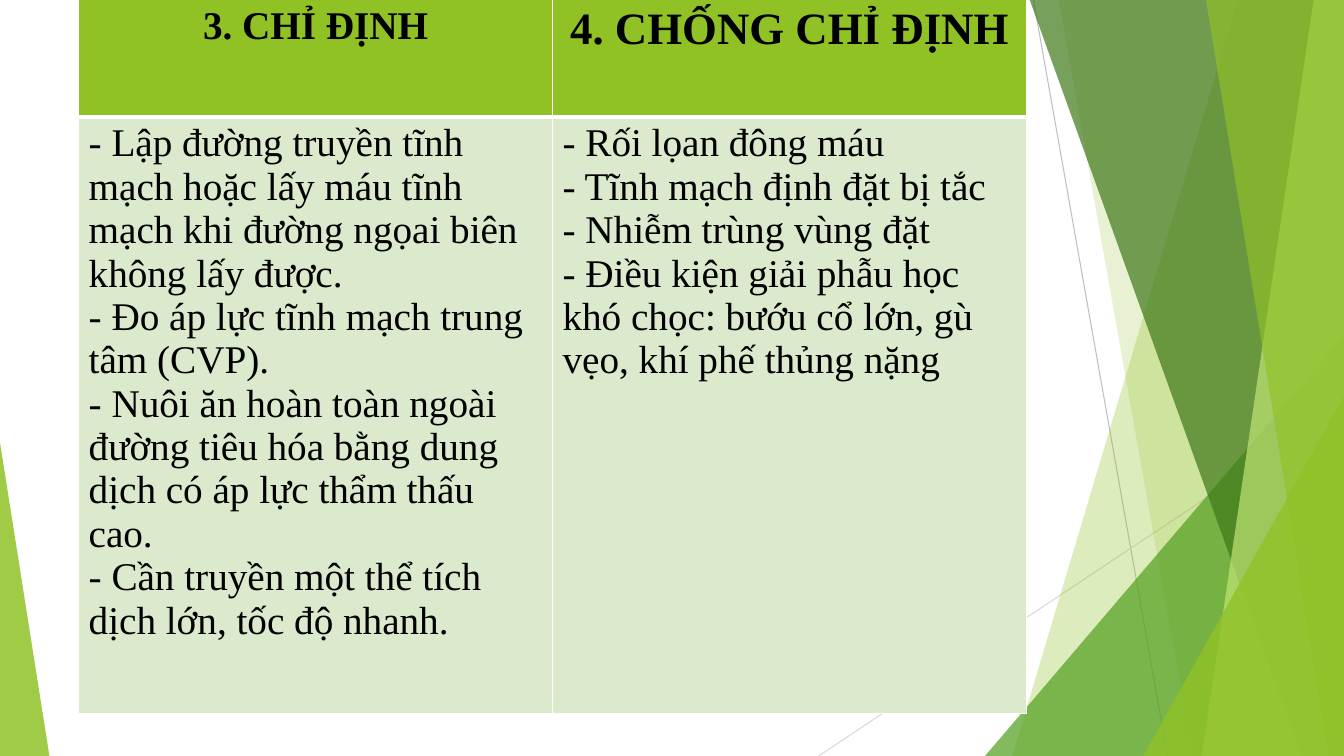
import pptx
import pptx.util
import pptx.dml.color
import pptx.enum.shapes
import pptx.enum.text
import pptx.oxml
import pptx.oxml.ns
from lxml import etree

Inches = pptx.util.Inches
Pt = pptx.util.Pt
qn = pptx.oxml.ns.qn

COLORS = {
    "lime": "90C226", "green": "54A021", "forest": "3F7819", "pale": "C0E474",
    "body": "DBE9CD", "white": "FFFFFF", "black": "000000",
    "gray": "BFBFBF", "silver": "D9D9D9",
}
WIDTH, HEIGHT, TOP = 13.33, 7.5, -0.01


def rgb(name):
    return pptx.dml.color.RGBColor.from_string(COLORS[name])


class Slide:
    font = "Times New Roman"

    def __init__(self, prs):
        self.s = prs.slides.add_slide(prs.slide_layouts[6])

    def paint(self, sp, color, alpha):
        sp.shadow.inherit = False
        sp.fill.solid()
        sp.fill.fore_color.rgb = rgb(color)
        sp.line.fill.background()
        clr = next(sp._element.spPr.iter(qn("a:srgbClr")))
        etree.SubElement(clr, qn("a:alpha"), val=str(alpha * 1000))

    def line(self, x1, y1, x2, y2, color):
        sp = self.s.shapes.add_connector(
            pptx.enum.shapes.MSO_CONNECTOR.STRAIGHT,
            Inches(x1), Inches(y1), Inches(x2), Inches(y2))
        sp.line.color.rgb = rgb(color)
        sp.line.width = Pt(0.75)
        etree.SubElement(sp._element.spPr, qn("a:effectLst"))

    def band(self, top_x, bottom_x, color, alpha):
        """Full-height band from a slanted left edge to the slide's right edge."""
        fb = self.s.shapes.build_freeform(Inches(top_x), Inches(TOP))
        fb.add_line_segments(
            [(Inches(x), Inches(y)) for x, y in
             ((WIDTH, TOP), (WIDTH, HEIGHT), (bottom_x, HEIGHT))], close=True)
        self.paint(fb.convert_to_shape(), color, alpha)

    def triangle(self, left, width, height, apex, color, alpha):
        """Triangle standing on the slide's bottom edge."""
        sp = self.s.shapes.add_shape(
            pptx.enum.shapes.MSO_SHAPE.ISOSCELES_TRIANGLE, Inches(left),
            Inches(HEIGHT - height), Inches(width), Inches(height))
        sp.adjustments[0] = apex
        self.paint(sp, color, alpha)

    def borders(self, cell, widths):
        tcPr = cell._tc.get_or_add_tcPr()
        for side, width in zip("LRTB", widths):
            ln = etree.SubElement(tcPr, qn(f"a:ln{side}"), w=str(Pt(width)))
            fill = etree.SubElement(ln, qn("a:solidFill"))
            etree.SubElement(fill, qn("a:srgbClr"), val=COLORS["white"])

    def cell(self, cell, paragraphs, fill, widths, align, **fmt):
        self.borders(cell, widths)
        cell.fill.solid()
        cell.fill.fore_color.rgb = rgb(fill)
        tf = cell.text_frame
        for i, text in enumerate(paragraphs):
            p = tf.add_paragraph() if i else tf.paragraphs[0]
            p.alignment = align
            p.text = text
            for r in p.runs:
                for name, value in {"name": self.font, **fmt}.items():
                    setattr(r.font, name, value)
                r.font.color.rgb = rgb("black")

    def table(self, left, top, col_width, row_heights, columns):
        align = pptx.enum.text.PP_ALIGN
        table = self.s.shapes.add_table(
            len(row_heights), len(columns), Inches(left), Inches(top),
            Inches(col_width * len(columns)), Inches(sum(row_heights))).table
        table.horz_banding = False
        for row, height in zip(table.rows, row_heights):
            row.height = Inches(height)
        for i, (title, size, items) in enumerate(columns):
            table.columns[i].width = Inches(col_width)
            self.cell(table.cell(0, i), [title], "lime", (1, 1, 1, 3),
                      align.CENTER, size=Pt(size), bold=True)
            self.cell(table.cell(1, i), items, "body", (1, 1, 3, 1),
                      align.LEFT, size=Pt(28), bold=False)


def main():
    prs = pptx.Presentation()
    prs.slide_width, prs.slide_height = Inches(WIDTH), Inches(HEIGHT)
    slide = Slide(prs)

    # Background facets, back to front
    slide.line(10.25, 0, 11.58, HEIGHT, "gray")
    slide.line(WIDTH, 4.03, 8.12, HEIGHT, "silver")
    slide.band(12.28, 10.04, "lime", 30)
    slide.band(10.5, 11.83, "lime", 20)
    slide.triangle(9.77, 3.56, 4.17, 1, "green", 72)
    slide.band(10.21, 12.91, "forest", 70)
    slide.band(13.03, 11.92, "pale", 70)
    slide.band(11.96, 13.18, "lime", 65)
    slide.triangle(11.34, 1.99, 3.57, 1, "lime", 80)
    slide.triangle(0, 0.49, 3.11, 0, "lime", 85)

    # Indications and contraindications
    slide.table(0.78, TOP, 4.7, (1.17, 5.92), [
        ("3. CHỈ ĐỊNH", 28, [
            "- Lập đường truyền tĩnh mạch hoặc lấy máu tĩnh mạch khi đường "
            "ngọai biên không lấy được.",
            "- Đo áp lực tĩnh mạch trung tâm (CVP).\v"
            "- Nuôi ăn hoàn toàn ngoài đường tiêu hóa bằng dung dịch có áp lực "
            "thẩm thấu cao.",
            "- Cần truyền một thể tích dịch lớn, tốc độ nhanh.",
        ]),
        ("4. CHỐNG CHỈ ĐỊNH", 32, [
            "- Rối lọan đông máu",
            "- Tĩnh mạch định đặt bị tắc",
            "- Nhiễm trùng vùng đặt",
            "- Điều kiện giải phẫu học khó chọc: bướu cổ lớn, gù vẹo, "
            "khí phế thủng nặng",
        ]),
    ])
    prs.save("out.pptx")


if __name__ == "__main__":
    main()
